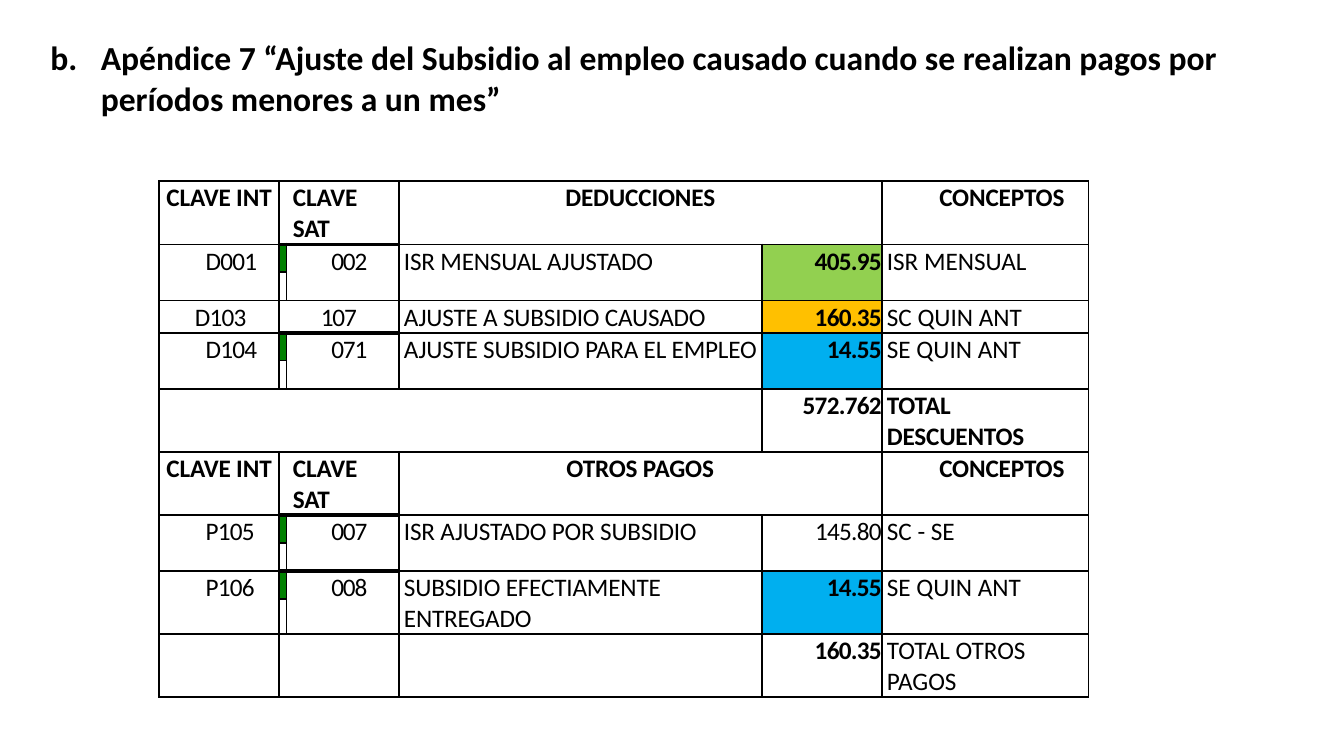
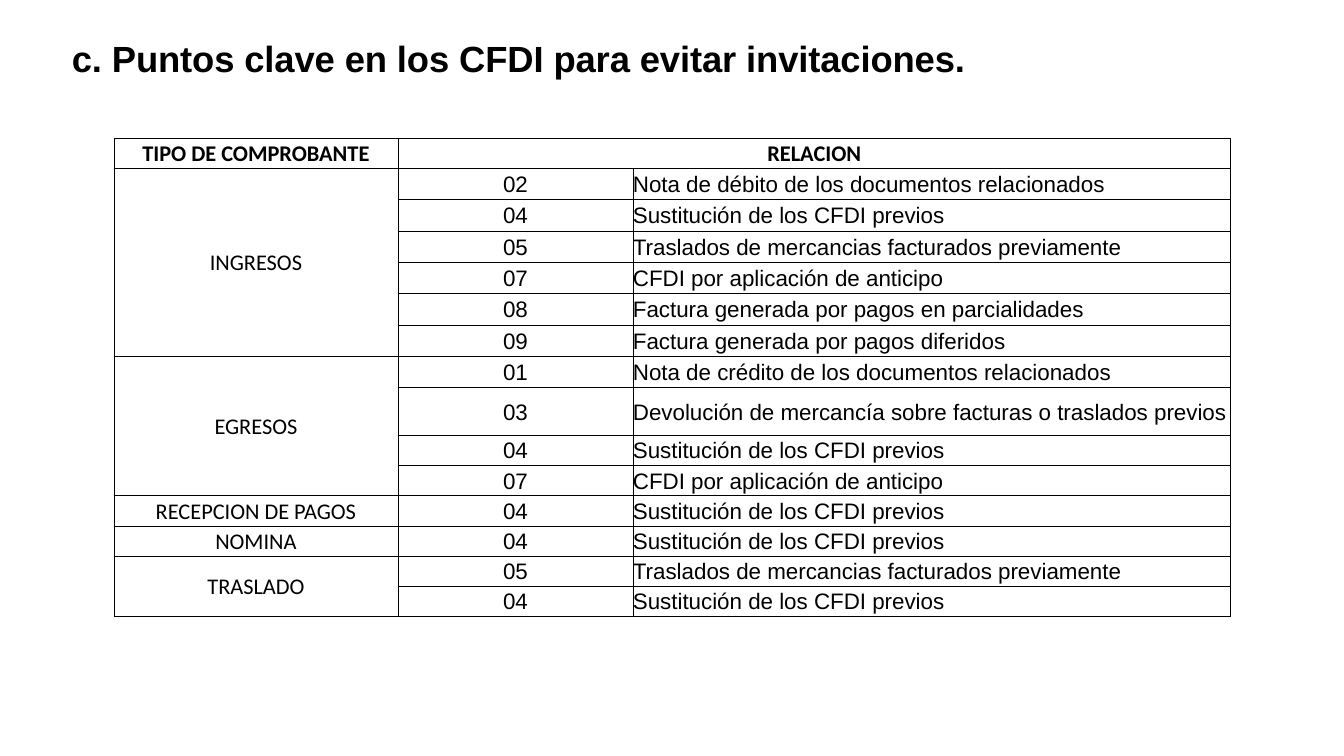
from dataclasses import dataclass

from lxml.etree import SubElement
from pptx import Presentation
from pptx.dml.color import RGBColor
from pptx.enum.text import MSO_ANCHOR, MSO_AUTO_SIZE, PP_ALIGN
from pptx.oxml.ns import qn
from pptx.slide import Slide
from pptx.text.text import _Paragraph as Para
from pptx.util import Cm, Pt

HUES = {"ink": "000000", "mark": "008000", "lime": "92D050",
        "gold": "FFC000", "sky": "00AFEF"}
LEFT, MID, RIGHT = PP_ALIGN.LEFT, PP_ALIGN.CENTER, PP_ALIGN.RIGHT
SIDES = ("L", "R", "T", "B")


@dataclass(frozen=True)
class Box:
    row: int
    col: int
    text: str = ""
    down: int = 1
    wide: int = 1
    align: PP_ALIGN = LEFT
    indent: float = 0
    bold: bool = False
    font: str = "Calibri"
    space: int = 0
    fill: str = ""


@dataclass(frozen=True)
class Head:
    text: str
    place: tuple[float, float, float, float]
    font: str
    size: int
    space: int = 0
    start: int = 0


@dataclass(frozen=True)
class Grid:
    place: tuple[float, float]
    cols: list[float]
    rows: list[float]
    boxes: list[Box]
    size: int
    line: float
    anchor: MSO_ANCHOR
    edges: dict[tuple[int, int, str], float]


def tone(name: str) -> RGBColor:
    return RGBColor.from_string(HUES[name])


def apply(target: object, values: dict) -> None:
    for name, value in values.items():
        setattr(target, name, value)


def write(para: Para, text: str, font: str, size: int, bold: bool, space: int) -> None:
    run = para.add_run()
    run.text = text
    apply(run.font, {"name": font, "size": Pt(size), "bold": bold})
    run.font.color.rgb = tone("ink")
    if space:
        run.font._element.set("spc", str(space))


def indent(para: Para, left: float, first: float = 0) -> None:
    props = para._p.get_or_add_pPr()
    props.set("marL", str(Cm(left)))
    props.set("indent", str(Cm(first)))


def number(para: Para, start: int) -> None:
    indent(para, 1.3, -1.27)
    SubElement(para._p.get_or_add_pPr(), qn("a:buAutoNum"),
               type="alphaLcPeriod", startAt=str(start))


def draw_head(slide: Slide, head: Head) -> None:
    title = slide.shapes.title
    apply(title, dict(zip(("left", "top", "width", "height"), map(Cm, head.place))))
    frame = title.text_frame
    apply(frame, {"margin_left": 0, "margin_right": 0, "margin_top": Cm(0.03),
                  "margin_bottom": 0, "word_wrap": True,
                  "auto_size": MSO_AUTO_SIZE.NONE,
                  "vertical_anchor": MSO_ANCHOR.BOTTOM})
    para = frame.paragraphs[0]
    apply(para, {"alignment": LEFT, "space_before": Pt(0)})
    if head.start:
        number(para, head.start)
    write(para, head.text, head.font, head.size, True, head.space)


def draw_grid(slide: Slide, grid: Grid) -> None:
    left, top = map(Cm, grid.place)
    shape = slide.shapes.add_table(len(grid.rows), len(grid.cols), left, top,
                                   Cm(sum(grid.cols)), Cm(sum(grid.rows)))
    table = shape.table
    apply(table, {"first_row": False, "horz_banding": False})
    for col, width in zip(table.columns, grid.cols):
        col.width = Cm(width)
    for row, height in zip(table.rows, grid.rows):
        row.height = Cm(height)
    for r in range(len(grid.rows)):
        for c in range(len(grid.cols)):
            cell = table.cell(r, c)
            apply(cell, {"margin_left": 0, "margin_right": 0, "margin_top": Cm(0.04),
                         "margin_bottom": 0, "vertical_anchor": grid.anchor})
            props = cell._tc.get_or_add_tcPr()
            for side in SIDES:
                width = grid.edges.get((r, c, side), grid.line)
                line = SubElement(props, qn(f"a:ln{side}"), w=str(Pt(width)))
                fill = SubElement(line, qn("a:solidFill"))
                SubElement(fill, qn("a:srgbClr"), val=HUES["ink"])
            cell.fill.background()
            cell.text_frame.paragraphs[0]._p.get_or_add_endParaRPr().set("sz", "800")
    for box in grid.boxes:
        cell = table.cell(box.row, box.col)
        if box.down * box.wide > 1:
            cell.merge(table.cell(box.row + box.down - 1, box.col + box.wide - 1))
        if box.fill:
            cell.fill.solid()
            cell.fill.fore_color.rgb = tone(box.fill)
        if box.text:
            para = cell.text_frame.paragraphs[0]
            para.alignment = box.align
            indent(para, box.indent)
            write(para, box.text, box.font, grid.size, box.bold, box.space)


def band(row: int, label: str) -> list[Box]:
    return [Box(row, 0, "CLAVE INT", align=MID, bold=True, space=-10),
            Box(row, 1, "CLAVE SAT", wide=2, indent=0.35, bold=True, space=-10),
            Box(row, 3, label, wide=2, align=MID, bold=True, space=-10),
            Box(row, 5, "CONCEPTOS", indent=1.45, bold=True, space=-10)]


def entry(row: int, key: str, code: str, label: str, sum_: str, note: str,
          fill: str = "", down: int = 2) -> list[Box]:
    tall = down == 2
    first = ([Box(row, 0, key, down, indent=1.17, space=-50),
              Box(row, 1, fill="mark"),
              Box(row, 2, code, down, indent=1.14, space=-80)] if tall else
             [Box(row, 0, key, align=MID, indent=0.08, space=-50),
              Box(row, 1, code, wide=2, align=MID, space=-80)])
    return first + [
        Box(row, 3, label, down, indent=0.13, space=-15),
        Box(row, 4, sum_, down, align=RIGHT, bold=bool(fill), space=-50, fill=fill),
        Box(row, 5, note, down, indent=0.13)]


def total(row: int, sum_: str, note: str, bold: bool) -> list[Box]:
    return [Box(row, 4, sum_, align=RIGHT, bold=True, space=-50),
            Box(row, 5, note, indent=0.13, bold=bold, space=-15 if bold else 0)]


def pay_grid() -> Grid:
    boxes = [
        *band(0, "DEDUCCIONES"),
        *entry(1, "D001", "002", "ISR MENSUAL AJUSTADO", "405.95", "ISR MENSUAL", "lime"),
        *entry(3, "D103", "107", "AJUSTE A SUBSIDIO CAUSADO", "160.35", "SC QUIN ANT",
               "gold", 1),
        *entry(4, "D104", "071", "AJUSTE SUBSIDIO PARA EL EMPLEO", "14.55",
               "SE QUIN ANT", "sky"),
        Box(6, 0, wide=4),
        *total(6, "572.762", "TOTAL DESCUENTOS", True),
        *band(7, "OTROS PAGOS"),
        *entry(8, "P105", "007", "ISR AJUSTADO POR SUBSIDIO", "145.80", "SC - SE"),
        *entry(10, "P106", "008", "SUBSIDIO EFECTIAMENTE ENTREGADO", "14.55",
               "SE QUIN ANT", "sky"),
        Box(12, 1, wide=2),
        *total(12, "160.35", "TOTAL OTROS PAGOS", False),
    ]
    edges = {}
    for row in (box.row for box in boxes if box.fill == "mark"):
        for col in (1, 2):
            edges[row - 1, col, "B"] = edges[row, col, "T"] = 3
        for r in (row, row + 1):
            edges[r, 1, "R"] = edges[r, 2, "L"] = 0.5
    tall, pair = 1.59, [0.7, 0.71]
    rows = [tall, *pair, 0.8, *pair, tall, tall, *pair, 0.7, 0.87, tall]
    return Grid((4.01, 4.57), [3.02, 0.18, 2.84, 9.15, 3.02, 5.21], rows, boxes,
                18, 1.5, MSO_ANCHOR.TOP, edges)


SWAP = ("04", "Sustitución de los CFDI previos")
MOVE = ("05", "Traslados de mercancias facturados previamente")
AHEAD = ("07", "CFDI por aplicación de anticipo")
TYPES = {
    "INGRESOS": [("02", "Nota de débito de los documentos relacionados"), SWAP, MOVE,
                 AHEAD, ("08", "Factura generada por pagos en parcialidades"),
                 ("09", "Factura generada por pagos diferidos")],
    "EGRESOS": [("01", "Nota de crédito de los documentos relacionados"),
                ("03", "Devolución de mercancía sobre facturas o traslados previos"),
                SWAP, AHEAD],
    "RECEPCION DE PAGOS": [SWAP],
    "NOMINA": [SWAP],
    "TRASLADO": [MOVE, SWAP],
}


def type_grid() -> Grid:
    boxes = [Box(0, 0, "TIPO DE COMPROBANTE", align=MID, bold=True),
             Box(0, 1, "RELACION", wide=2, align=MID, bold=True)]
    row = 1
    for label, links in TYPES.items():
        boxes.append(Box(row, 0, label, len(links), align=MID))
        for code, text in links:
            boxes += [Box(row, 1, code, align=MID, font="Arial"),
                      Box(row, 2, text, font="Arial")]
            row += 1
    rows = [0.76] + [0.79] * 7 + [1.2] + [0.76] * 6
    return Grid((2.87, 3.48), [7.16, 5.92, 15.06], rows, boxes,
                16, 0.5, MSO_ANCHOR.MIDDLE, {})


def main() -> None:
    deck = Presentation()
    apply(deck, {"slide_width": Cm(33.87), "slide_height": Cm(19.05)})
    pages = [
        (Head("Apéndice 7 “Ajuste del Subsidio al empleo causado cuando se realizan "
              "pagos por períodos menores a un mes”",
              (1.24, 0.89, 30.23, 2.08), "Calibri", 24, start=2), pay_grid()),
        (Head("c. Puntos clave en los CFDI para evitar invitaciones.",
              (1.81, 0.86, 26.54, 1.14), "Arial", 26, -10), type_grid()),
    ]
    for head, grid in pages:
        slide = deck.slides.add_slide(deck.slide_layouts[5])
        draw_head(slide, head)
        draw_grid(slide, grid)
    deck.save("out.pptx")


if __name__ == "__main__":
    main()
